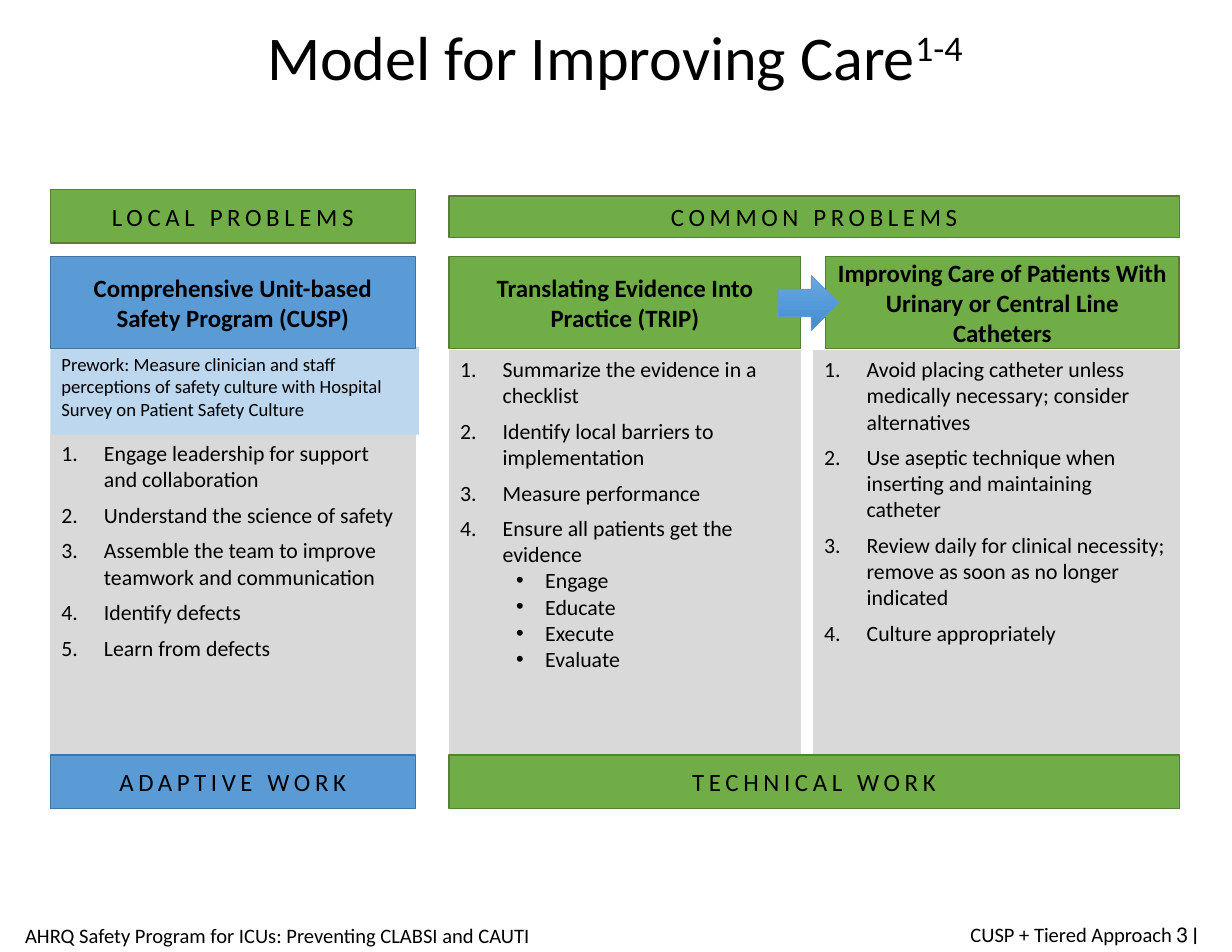
import pptx
import pptx.util
from lxml import etree
from pptx.dml.color import RGBColor
from pptx.enum.shapes import MSO_SHAPE
from pptx.enum.text import MSO_ANCHOR, PP_ALIGN
from pptx.oxml.ns import qn
from pptx.util import Inches

COLORS = {
    "text": "000000",
    "green": "70AD47",
    "green_edge": "538035",
    "blue": "5B9BD5",
    "blue_edge": "43739E",
    "pale_blue": "BDD7EE",
    "gray": "D9D9D9",
    "arrow_top": "71A6DB",
    "arrow_middle": "559BDB",
    "arrow_bottom": "448ACA",
}
FONT = "Calibri"
HEADING_TOP, HEADING_HEIGHT = 2.29, 0.82
WORK_TOP, BANNER_HEIGHT = 6.74, 0.48
LEFT, COLUMN_WIDTH = 0.45, 3.26
COMMON_LEFT, COMMON_WIDTH = 4.01, 6.52


def rgb(name):
    """Return the named colour."""
    return RGBColor.from_string(COLORS[name])


def style(paragraph, size, bold=False, spacing=0):
    """Format every run of a paragraph."""
    for run in paragraph.runs:
        run.font.name = FONT
        run.font.size = pptx.util.Pt(size)
        run.font.bold = bold
        run.font.color.rgb = rgb("text")
        if spacing:
            run.font._element.set("spc", str(spacing * 100))


def add_panel(slide, box, fill, edge=None, line_width=1, preset=MSO_SHAPE.RECTANGLE):
    """Add a flat filled shape in the box."""
    panel = slide.shapes.add_shape(preset, *map(Inches, box))
    panel.shadow.inherit = False
    panel.fill.solid()
    panel.fill.fore_color.rgb = rgb(fill)
    if edge:
        panel.line.color.rgb = rgb(edge)
        panel.line.width = pptx.util.Pt(line_width)
    else:
        panel.line.fill.background()
    return panel


def add_label(slide, box, text, color, bold=False, spacing=0):
    """Add a coloured bar with centred text."""
    bar = add_panel(slide, box, color, color + "_edge")
    frame = bar.text_frame
    frame.text = text
    frame.vertical_anchor = MSO_ANCHOR.MIDDLE
    frame.paragraphs[0].alignment = PP_ALIGN.CENTER
    style(frame.paragraphs[0], 16, bold, spacing)


def set_bullet(paragraph, nested):
    """Number a step, or give a nested item a round bullet."""
    properties = paragraph._p.get_or_add_pPr()
    margin, hanging = (0.76, 0.26) if nested else (0.38, 0.38)
    properties.set("marL", str(Inches(margin)))
    properties.set("indent", str(-Inches(hanging)))
    if nested:
        paragraph.level = 1
        etree.SubElement(properties, qn("a:buFont")).set("typeface", "Arial")
        etree.SubElement(properties, qn("a:buChar")).set("char", "•")
    else:
        etree.SubElement(properties, qn("a:buAutoNum")).set("type", "arabicPeriod")


def add_steps(slide, box, steps, details=()):
    """Add a gray panel of numbered steps, with details under the last one."""
    frame = add_panel(slide, box, "gray", "gray", 0.5).text_frame
    frame.vertical_anchor = MSO_ANCHOR.TOP
    items = [*steps, *details]
    frame.text = "\n".join(items)
    for position, paragraph in enumerate(frame.paragraphs, 1):
        paragraph.alignment = PP_ALIGN.LEFT
        set_bullet(paragraph, nested=position > len(steps))
        tight = details and len(steps) <= position < len(items)
        paragraph.space_after = pptx.util.Pt(0 if tight else 6)
        style(paragraph, 14)


def add_prework(slide, box, text):
    """Add the pale note above the adaptive steps."""
    frame = add_panel(slide, box, "pale_blue").text_frame
    frame.text = text
    frame.vertical_anchor = MSO_ANCHOR.TOP
    frame.paragraphs[0].alignment = PP_ALIGN.LEFT
    style(frame.paragraphs[0], 12)


def add_arrow(slide, box):
    """Add the shaded arrow between the technical headings."""
    arrow = add_panel(slide, box, "blue", "blue", 0.5, MSO_SHAPE.RIGHT_ARROW)
    arrow.fill.gradient()
    arrow.fill.gradient_angle = 270
    stops = arrow.fill._fill._gradFill.find(qn("a:gsLst"))
    for stop in list(stops):
        stops.remove(stop)
    shades = (("arrow_top", 0), ("arrow_middle", 50), ("arrow_bottom", 100))
    for name, percent in shades:
        stop = etree.SubElement(stops, qn("a:gs"))
        stop.set("pos", str(percent * 1000))
        etree.SubElement(stop, qn("a:srgbClr")).set("val", COLORS[name])


def add_text(slide, box, text, size, alignment):
    """Add a one-paragraph text box and return its paragraph."""
    frame = slide.shapes.add_textbox(*map(Inches, box)).text_frame
    frame.word_wrap = True
    frame.vertical_anchor = MSO_ANCHOR.MIDDLE
    frame.text = text
    paragraph = frame.paragraphs[0]
    paragraph.alignment = alignment
    style(paragraph, size)
    return paragraph


def add_title(slide, box):
    """Add the title with its raised reference numbers."""
    title = add_text(slide, box, "Model for Improving Care", 40, PP_ALIGN.CENTER)
    title.line_spacing = 0.9
    references = title.add_run()
    references.text = "1-4"
    style(title, 40)
    references.font._element.set("baseline", "30000")


def add_adaptive(slide, left, width):
    """Add the local problems column."""
    add_steps(slide, (left, 3.88, width, 2.86), (
        "Engage leadership for support and collaboration",
        "Understand the science of safety",
        "Assemble the team to improve teamwork and communication",
        "Identify defects",
        "Learn from defects",
    ))
    add_prework(slide, (left, 3.1, width + 0.03, 0.78),
                "Prework: Measure clinician and staff perceptions of safety culture "
                "with Hospital Survey on Patient Safety Culture")
    add_label(slide, (left, 1.69, width, BANNER_HEIGHT), "LOCAL PROBLEMS", "green", spacing=3)
    add_label(slide, (left, HEADING_TOP, width, HEADING_HEIGHT),
              "Comprehensive Unit-based Safety Program (CUSP)", "blue", bold=True)
    add_label(slide, (left, WORK_TOP, width, BANNER_HEIGHT), "ADAPTIVE WORK", "blue", spacing=3)


def add_technical(slide, left, width):
    """Add the two common problems columns and the arrow joining them."""
    right = left + width
    add_steps(slide, (left, 3.13, 3.14, 3.62), (
        "Summarize the evidence in a checklist",
        "Identify local barriers to implementation",
        "Measure performance",
        "Ensure all patients get the evidence",
    ), ("Engage", "Educate", "Execute", "Evaluate"))
    add_steps(slide, (right - 3.27, 3.13, 3.27, 3.62), (
        "Avoid placing catheter unless medically necessary; consider alternatives",
        "Use aseptic technique when inserting and maintaining catheter",
        "Review daily for clinical necessity; remove as soon as no longer indicated",
        "Culture appropriately",
    ))
    add_label(slide, (left, 1.75, width, 0.37), "COMMON PROBLEMS", "green", spacing=3)
    add_label(slide, (left, HEADING_TOP, 3.14, HEADING_HEIGHT),
              "Translating Evidence Into Practice (TRIP)", "green", bold=True)
    add_label(slide, (right - 3.16, HEADING_TOP, 3.16, HEADING_HEIGHT),
              "Improving Care of Patients With Urinary or Central Line Catheters",
              "green", bold=True)
    add_arrow(slide, (6.95, 2.46, 0.54, 0.49))
    add_label(slide, (left, WORK_TOP, width, BANNER_HEIGHT), "TECHNICAL WORK", "green", spacing=3)


def main():
    """Build and save the slide."""
    deck = pptx.Presentation()
    deck.slide_width, deck.slide_height = Inches(11), Inches(8.5)
    slide = deck.slides.add_slide(deck.slide_layouts[6])
    add_title(slide, (0.45, 0.1, 10.08, 0.88))
    add_adaptive(slide, LEFT, COLUMN_WIDTH)
    add_technical(slide, COMMON_LEFT, COMMON_WIDTH)
    add_text(slide, (-0.17, 8.15, 5.29, 0.4),
             "AHRQ Safety Program for ICUs: Preventing CLABSI and CAUTI", 13.2, PP_ALIGN.CENTER)
    add_text(slide, (8.32, 8.1, 2.47, 0.49), "CUSP + Tiered Approach ׀ 3", 13.2, PP_ALIGN.RIGHT)
    deck.save("out.pptx")


if __name__ == "__main__":
    main()
